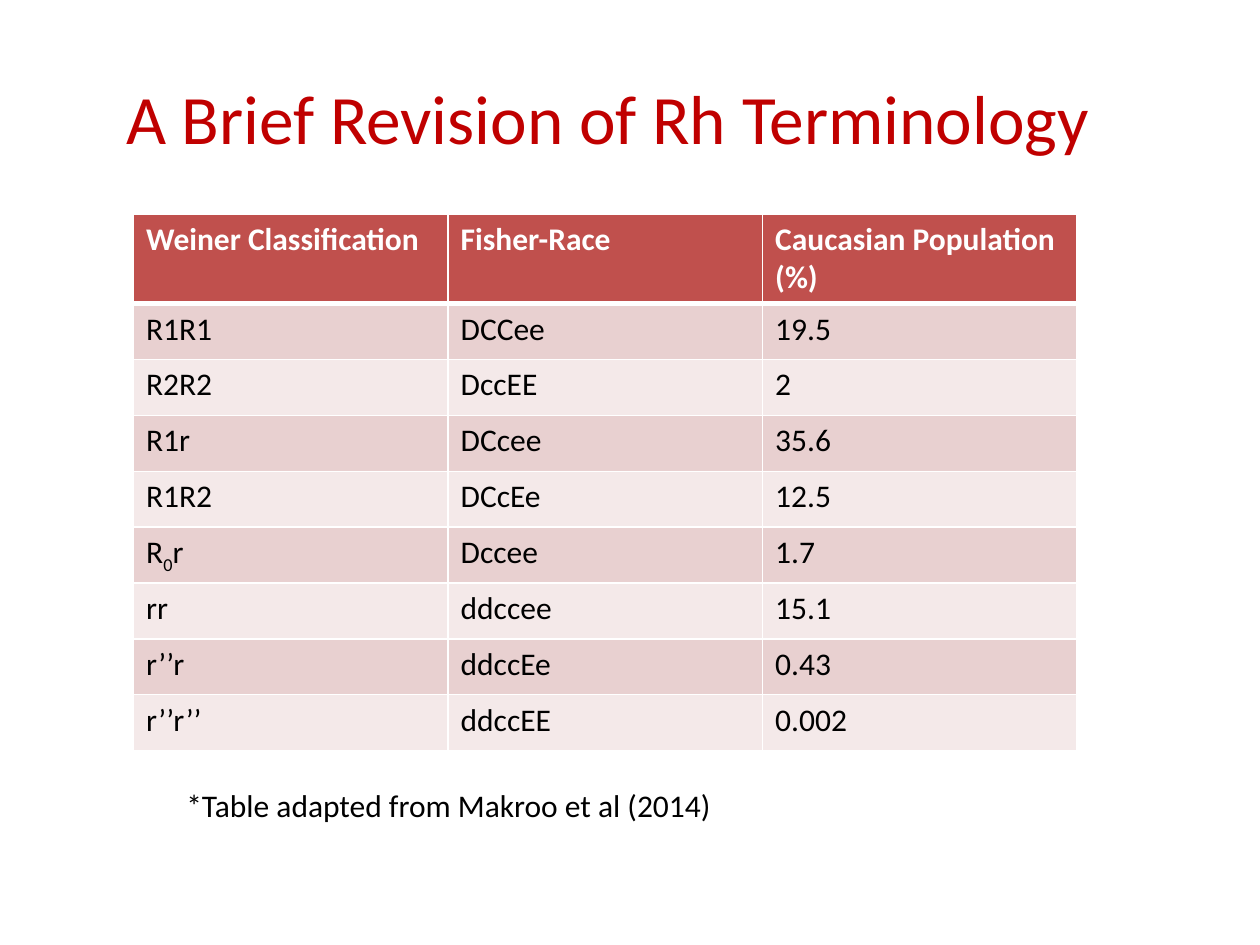
"""Build a slide with a table of Rh terminology."""
from dataclasses import dataclass

from lxml import etree
from pptx import Presentation
from pptx import util as u
from pptx.dml.color import RGBColor
from pptx.enum import text
from pptx.oxml.ns import qn

PX = 3048
FONT = "Calibri"
WHITE, BLACK, TITLE_RED, HEADER_RED = "FFFFFF", "000000", "C00000", "C0504D"
BANDS = ("E8D0D0", "F4E9E9")
COLUMN_WIDTH, HEADER_HEIGHT, ROW_HEIGHT = 749, 210, 133


@dataclass(frozen=True)
class Box:
    """Position and size in px."""
    left: int
    top: int
    width: int
    height: int

    def emu(self) -> tuple[int, ...]:
        """Return the four lengths in EMU."""
        return tuple(px(n) for n in (self.left, self.top, self.width, self.height))


@dataclass(frozen=True)
class Style:
    """Look of a run."""
    color: str = BLACK
    size: float = 18
    bold: bool = False


@dataclass(frozen=True)
class Phenotype:
    """One table row; an underscore in weiner marks a subscript character."""
    weiner: str
    fisher_race: str
    population: str


HEADER = Phenotype("Weiner Classification", "Fisher-Race", "Caucasian Population (%)")
PHENOTYPES = (
    Phenotype("R1R1", "DCCee", "19.5"),
    Phenotype("R2R2", "DccEE", "2"),
    Phenotype("R1r", "DCcee", "35.6"),
    Phenotype("R1R2", "DCcEe", "12.5"),
    Phenotype("R_0r", "Dccee", "1.7"),
    Phenotype("rr", "ddccee", "15.1"),
    Phenotype("r’’r", "ddccEe", "0.43"),
    Phenotype("r’’r’’", "ddccEE", "0.002"),
)


def px(length: int) -> int:
    """Turn px into EMU."""
    return u.Emu(length * PX)


def rgb(color: str) -> RGBColor:
    """Turn a hex string into a colour."""
    return RGBColor.from_string(color)


def add_run(paragraph, words: str, style: Style, subscript: bool = False) -> None:
    """Add one formatted run."""
    run = paragraph.add_run()
    run.text = words
    run.font.name = FONT
    run.font.size = u.Pt(style.size)
    run.font.bold = style.bold
    run.font.color.rgb = rgb(style.color)
    if subscript:
        run.font._element.set("baseline", "-25000")


def add_marked_text(paragraph, words: str, style: Style) -> None:
    """Add text, lowering the character after an underscore."""
    before, _, after = words.partition("_")
    add_run(paragraph, before, style)
    if after:
        add_run(paragraph, after[0], style, subscript=True)
        add_run(paragraph, after[1:], style)


def set_borders(cell, bottom: float, top: float) -> None:
    """Draw white cell borders ahead of the fill."""
    properties = cell._tc.get_or_add_tcPr()
    widths = {"a:lnL": 1, "a:lnR": 1, "a:lnT": top, "a:lnB": bottom}
    for index, (tag, width) in enumerate(widths.items()):
        line = etree.Element(qn(tag), w=str(u.Pt(width)))
        fill = etree.SubElement(line, qn("a:solidFill"))
        etree.SubElement(fill, qn("a:srgbClr"), val=WHITE)
        properties.insert(index, line)


def add_title(slide, box: Box, words: str) -> None:
    """Fill and place the title placeholder."""
    title = slide.shapes.title
    title.left, title.top, title.width, title.height = box.emu()
    frame = title.text_frame
    frame.vertical_anchor = text.MSO_ANCHOR.MIDDLE
    frame.paragraphs[0].alignment = text.PP_ALIGN.CENTER
    add_run(frame.paragraphs[0], words, Style(TITLE_RED, 39.6))


def add_phenotype_table(slide, left: int, top: int) -> None:
    """Draw the header and the banded rows."""
    rows = (HEADER, *PHENOTYPES)
    box = Box(left, top, 3 * COLUMN_WIDTH, HEADER_HEIGHT + len(PHENOTYPES) * ROW_HEIGHT)
    table = slide.shapes.add_table(len(rows), 3, *box.emu()).table
    for column in table.columns:
        column.width = px(COLUMN_WIDTH)
    for index, row in enumerate(rows):
        is_header = index == 0
        table.rows[index].height = px(HEADER_HEIGHT if is_header else ROW_HEIGHT)
        style = Style(WHITE, bold=True) if is_header else Style()
        color = HEADER_RED if is_header else BANDS[(index - 1) % 2]
        for cell, words in zip(table.rows[index].cells,
                               (row.weiner, row.fisher_race, row.population)):
            cell.fill.solid()
            cell.fill.fore_color.rgb = rgb(color)
            set_borders(cell, bottom=3 if is_header else 1, top=3 if index == 1 else 1)
            add_marked_text(cell.text_frame.paragraphs[0], words, style)


def add_note(slide, box: Box, words: str) -> None:
    """Add the source line below the table."""
    frame = slide.shapes.add_textbox(*box.emu()).text_frame
    frame.word_wrap = True
    frame.auto_size = text.MSO_AUTO_SIZE.SHAPE_TO_FIT_TEXT
    add_run(frame.paragraphs[0], words, Style())


def main() -> None:
    """Build and save the presentation."""
    presentation = Presentation()
    presentation.slide_width, presentation.slide_height = px(3000), px(2250)
    slide = presentation.slides.add_slide(presentation.slide_layouts[5])
    add_title(slide, Box(150, 90, 2700, 375), "A Brief Revision of Rh Terminology\t")
    add_phenotype_table(slide, 318, 510)
    add_note(slide, Box(414, 1857, 1416, 120), "*Table adapted from Makroo et al (2014)")
    presentation.save("out.pptx")


if __name__ == "__main__":
    main()
